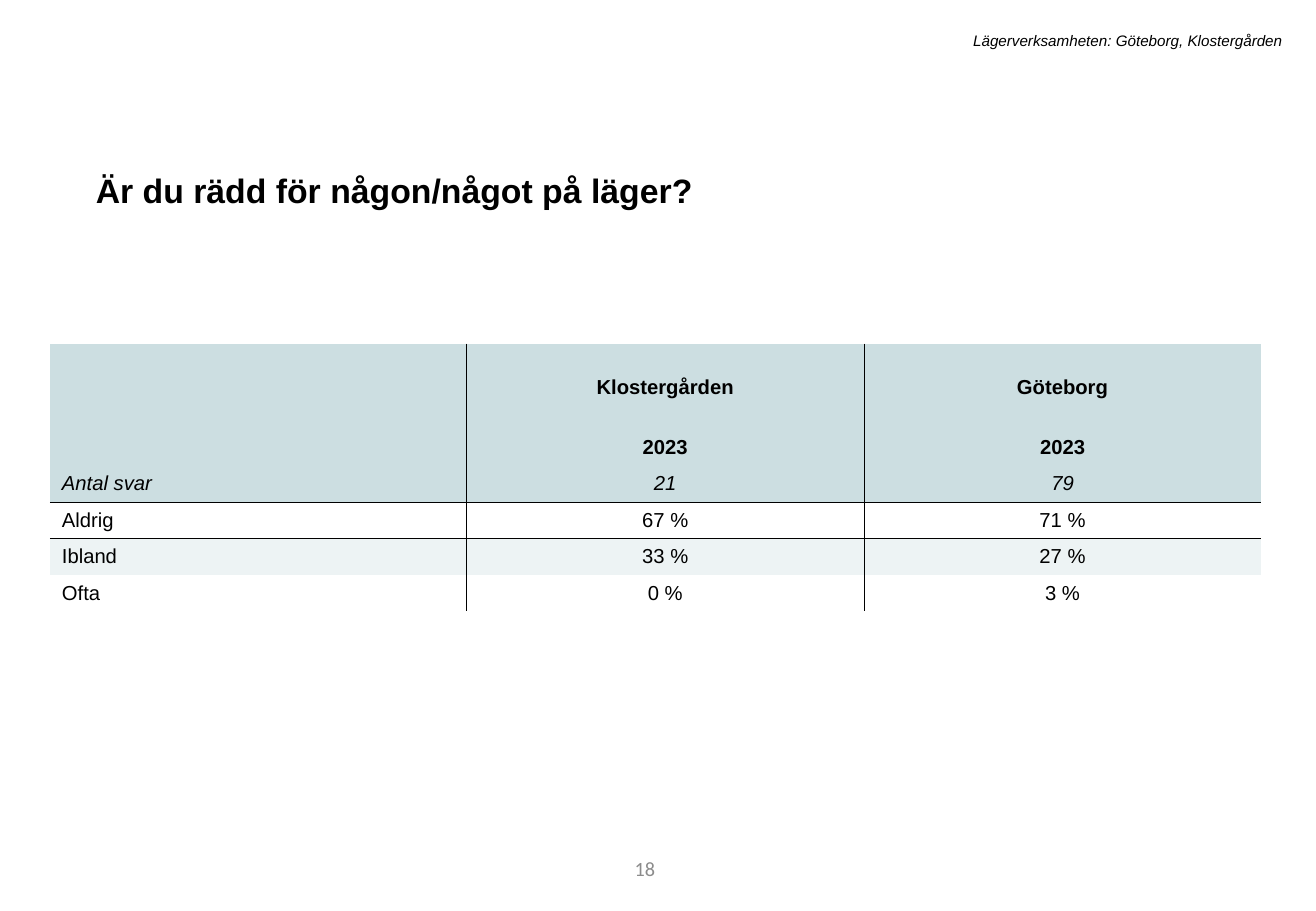
from pptx import Presentation
from pptx.dml.color import RGBColor
from pptx.enum.text import MSO_ANCHOR as Anchor, PP_ALIGN as Align
from pptx.oxml import parse_xml
from pptx.oxml.ns import nsdecls, qn
from pptx.util import Inches, Pt

NO_STYLE = "{2D5ABB26-0587-4C30-8999-92F81FD0307C}"
HEADER_FILL, BAND_FILL, PLAIN_FILL = "CCDEE1", "EDF3F4", "FFFFFF"


def color(hex_code):
    return RGBColor.from_string(hex_code)


def write(frame, text, size, align=Align.LEFT, font="Arial", ink="000000", bold=False, italic=False):
    paragraph = frame.paragraphs[0]
    paragraph.text = text
    paragraph.alignment = align
    paragraph.font.name = font
    paragraph.font.size = Pt(size)
    paragraph.font.bold = bold
    paragraph.font.italic = italic
    paragraph.font.color.rgb = color(ink)
    return paragraph


prs = Presentation()
prs.slide_width, prs.slide_height = Inches(10.83), Inches(7.5)
slide = prs.slides.add_slide(prs.slide_layouts[6])

# Page number
page_number = slide.shapes.add_textbox(Inches(3.05), Inches(6.95), Inches(2.44), Inches(0.4)).text_frame
page_number.word_wrap = True
page_number.vertical_anchor = Anchor.MIDDLE
write(page_number, "18", 12, Align.RIGHT, font="Calibri", ink="8C8C8C")

# Question
question = slide.shapes.add_textbox(Inches(0.69), Inches(1.28), Inches(9.4), Inches(0.47)).text_frame
question.word_wrap = True
heading = write(question, "Är du rädd för någon/något på läger?", 20, bold=True)
heading.line_spacing = 1.2
heading.space_before = Pt(10)

# Running header
running_header = slide.shapes.add_textbox(Inches(1.79), Inches(0.21), Inches(8.86), Inches(0.25)).text_frame
running_header.word_wrap = True
write(running_header, "Lägerverksamheten: Göteborg, Klostergården", 9, Align.RIGHT, italic=True)

# Answer table: three header rows, then banded answers
answers = [
    ("", "Klostergården", "Göteborg"),
    ("", "2023", "2023"),
    ("Antal svar", "21", "79"),
    ("Aldrig", "67 %", "71 %"),
    ("Ibland", "33 %", "27 %"),
    ("Ofta", "0 %", "3 %"),
]
column_widths = [3.43, 3.27, 3.27]
row_heights = [0.5, 0.5, 0.3, 0.3, 0.3, 0.3]
row_fills = [HEADER_FILL] * 3 + [PLAIN_FILL, BAND_FILL, PLAIN_FILL]
count_row = 2

table = slide.shapes.add_table(
    len(answers), len(column_widths), Inches(0.41), Inches(2.83),
    Inches(sum(column_widths)), Inches(sum(row_heights))).table
table.first_row = table.horz_banding = False
table._tbl.tblPr.find(qn("a:tableStyleId")).text = NO_STYLE
for column, width in zip(table.columns, column_widths):
    column.width = Inches(width)

for r, row in enumerate(answers):
    table.rows[r].height = Inches(row_heights[r])
    for c, text in enumerate(row):
        cell = table.cell(r, c)
        # Rules between columns and around the count row's lower edge
        edges = {"lnL": c > 0, "lnR": c < len(row) - 1,
                 "lnT": r == count_row + 1, "lnB": r == count_row}
        for edge, drawn in edges.items():
            if drawn:
                cell._tc.get_or_add_tcPr().append(parse_xml(
                    f'<a:{edge} {nsdecls("a")} w="3175"><a:solidFill>'
                    f'<a:srgbClr val="000000"/></a:solidFill></a:{edge}>'))
        cell.fill.solid()
        cell.fill.fore_color.rgb = color(row_fills[r])
        cell.vertical_anchor = Anchor.BOTTOM if r < count_row else Anchor.MIDDLE
        write(cell.text_frame, text, 12, Align.CENTER if c else Align.LEFT,
              bold=r < count_row, italic=r == count_row)

prs.save("out.pptx")
